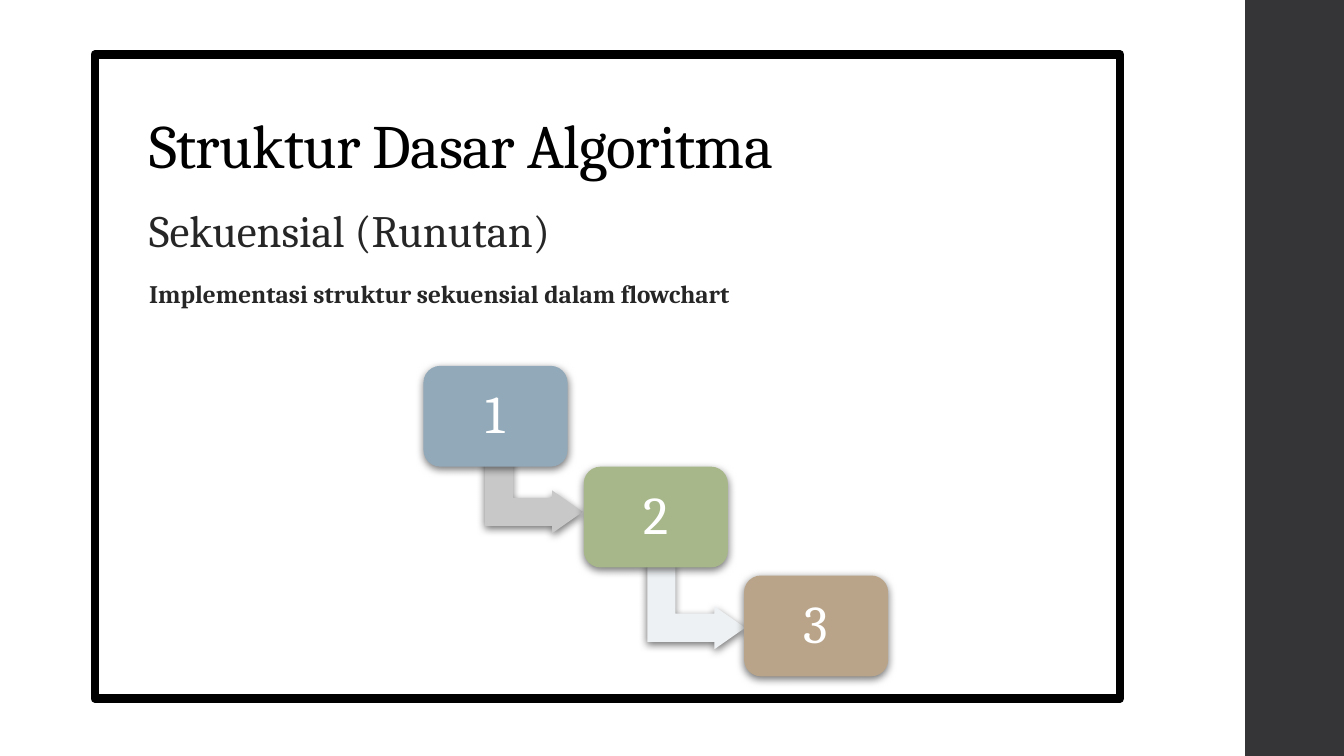
from lxml import etree
from pptx import Presentation
from pptx.dml.color import RGBColor
from pptx.enum.shapes import MSO_SHAPE
from pptx.enum.text import MSO_ANCHOR, MSO_AUTO_SIZE, PP_ALIGN
from pptx.oxml.ns import qn
from pptx.util import Inches, Pt

RECT = MSO_SHAPE.RECTANGLE
ROUNDED = MSO_SHAPE.ROUNDED_RECTANGLE
BENT_ARROW = MSO_SHAPE.BENT_UP_ARROW
FONT = "Cambria"
COLORS = {
    "white": "FFFFFF",
    "black": "000000",
    "sidebar": "353537",
    "body": "262626",
    "step_blue": "92A9B9",
    "step_green": "A7B789",
    "step_tan": "B9A489",
    "arrow_gray": "C8C8C9",
    "arrow_pale": "EEF1F3",
}


def color(name):
    return RGBColor.from_string(COLORS[name])


def add_filled(page, kind, box, fill):
    """Add a preset shape with a flat fill, no outline and no shadow."""
    shape = page.shapes.add_shape(kind, *map(Inches, box))
    shape.fill.solid()
    shape.fill.fore_color.rgb = color(fill)
    shape.line.fill.background()
    shape.shadow.inherit = False
    return shape


def add_soft_shadow(shape):
    effects = shape._element.spPr.find(qn("a:effectLst"))
    shadow = etree.SubElement(
        effects, qn("a:outerShdw"), blurRad=str(Pt(6)), dist=str(Pt(2)),
        dir="5400000", algn="ctr", rotWithShape="0")
    shade = etree.SubElement(shadow, qn("a:srgbClr"), val=COLORS["black"])
    etree.SubElement(shade, qn("a:alpha"), val="55000")


def add_span(para, text, size, tone, bold=False):
    span = para.add_run()
    span.text = text
    span.font.name = FONT
    span.font.size = Pt(size)
    span.font.bold = bold
    span.font.color.rgb = color(tone)
    return span


def place_placeholder(holder, box, anchor):
    holder.left, holder.top, holder.width, holder.height = map(Inches, box)
    frame = holder.text_frame
    frame.word_wrap = True
    frame.auto_size = MSO_AUTO_SIZE.NONE
    frame.vertical_anchor = anchor
    return frame


def add_backdrop(page, width, height):
    """Draw the dark band on the right and the thick content frame."""
    band_left = 12.35
    add_filled(page, RECT, (band_left, 0, width - band_left, height), "sidebar")
    border = add_filled(page, RECT, (0.94, 0.54, 10.17, 6.39), "white")
    border.line.color.rgb = color("black")
    border.line.width = Pt(6)
    etree.SubElement(border.line._ln, qn("a:round"))


def fill_title(holder, box):
    para = place_placeholder(holder, box, MSO_ANCHOR.BOTTOM).paragraphs[0]
    para.alignment = PP_ALIGN.LEFT
    para.line_spacing = 0.9
    span = add_span(para, "Struktur Dasar Algoritma", 44, "black")
    span.font._element.set("spc", "-50")


def fill_body(holder, box):
    frame = place_placeholder(holder, box, MSO_ANCHOR.TOP)
    lines = [
        ("Sekuensial (Runutan)", 32, False),
        ("Implementasi struktur sekuensial dalam flowchart", 18, True),
    ]
    for index, (text, size, bold) in enumerate(lines):
        para = frame.add_paragraph() if index else frame.paragraphs[0]
        para.alignment = PP_ALIGN.LEFT
        para.line_spacing = 0.95
        para.space_before = Pt(14)
        para.space_after = Pt(2)
        props = para._p.get_or_add_pPr()
        props.set("marL", "0")
        props.set("indent", "0")
        etree.SubElement(props, qn("a:buNone"))
        add_span(para, text, size, "body", bold)


def add_step_arrow(page, box, fill):
    arrow = add_filled(page, BENT_ARROW, box, fill)
    arrow.rotation = 90
    for index, value in enumerate((0.328, 0.25, 0.358)):
        arrow.adjustments[index] = value
    add_soft_shadow(arrow)


def add_step_box(page, box, number, fill):
    step = add_filled(page, ROUNDED, box, fill)
    step.adjustments[0] = 0.167
    add_soft_shadow(step)
    frame = step.text_frame
    frame.word_wrap = True
    frame.vertical_anchor = MSO_ANCHOR.MIDDLE
    frame.margin_left = frame.margin_right = Inches(0.21)
    frame.margin_top = frame.margin_bottom = Inches(0.21)
    para = frame.paragraphs[0]
    para.alignment = PP_ALIGN.CENTER
    para.line_spacing = 0.9
    add_span(para, str(number), 38, "white")


def add_staircase(page, left, top):
    """Draw the numbered steps, each arrow leading to the next step."""
    # Drop below the top, box fill, and the arrow's offset and fill
    steps = [
        (0, "step_blue", (0.67, 0.75, "arrow_gray")),
        (1, "step_green", (0.69, 0.9, "arrow_pale")),
        (2.08, "step_tan", None),
    ]
    for index, (drop, fill, arrow) in enumerate(steps):
        x, y = left + 1.59 * index, top + drop
        if arrow:
            across, down, tone = arrow
            add_step_arrow(page, (x + across, y + down, 0.85, 0.97), tone)
        add_step_box(page, (x, y, 1.43, 1), index + 1, fill)


def main():
    width, height = 13.33, 7.5
    deck = Presentation()
    deck.slide_width, deck.slide_height = Inches(width), Inches(height)
    page = deck.slides.add_slide(deck.slide_layouts[1])
    title, body = page.placeholders
    add_backdrop(page, width, height)
    # Bring the text in front of the backdrop
    for holder in (title, body):
        page.shapes._spTree.append(holder._element)
    fill_title(title, (1.38, 0.4, 10.6, 1.45))
    fill_body(body, (1.38, 2, 9.4, 4.76))
    add_staircase(page, 4.2, 3.63)
    deck.save("out.pptx")


if __name__ == "__main__":
    main()
